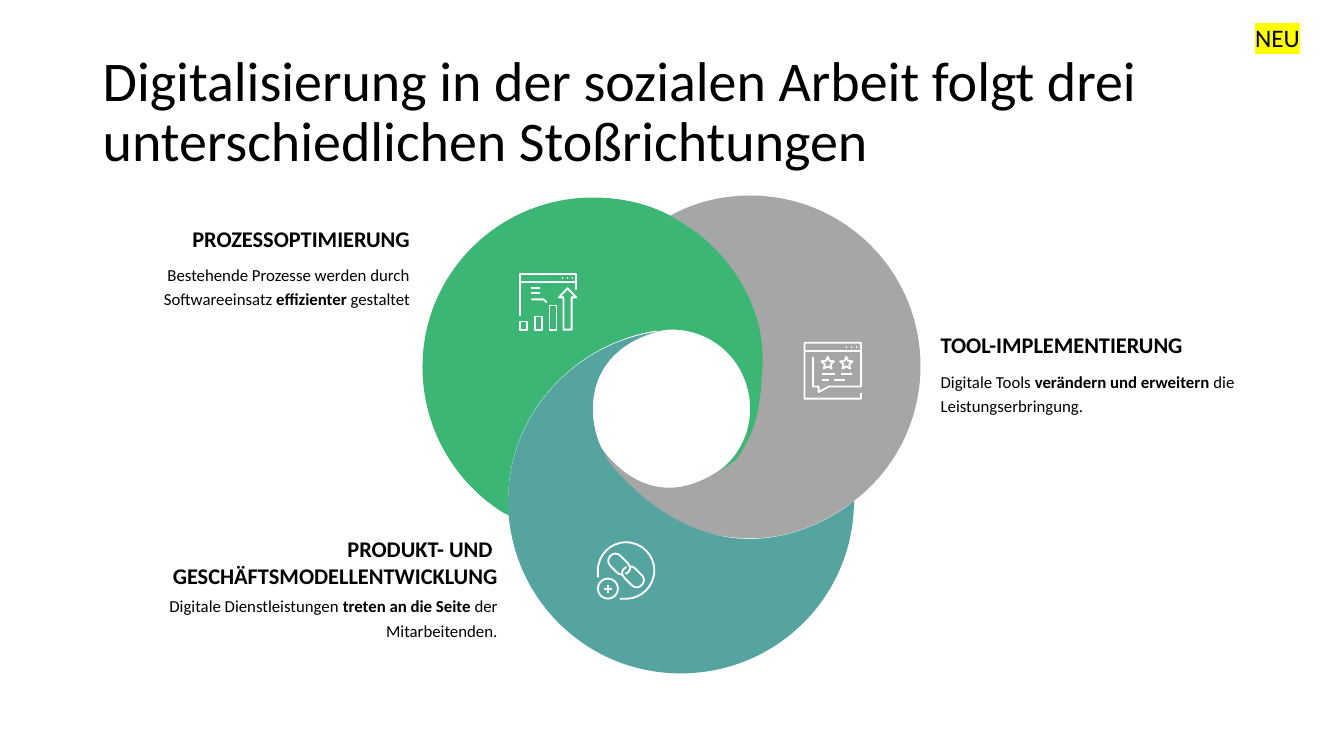
from dataclasses import dataclass
from math import cos, radians, sin

from pptx import Presentation
from pptx.dml.color import RGBColor
from pptx.enum.text import MSO_ANCHOR, PP_ALIGN
from pptx.oxml import parse_xml
from pptx.oxml.ns import nsdecls, qn
from pptx.util import Emu, Pt

COLS, ROWS, CELL = 1333, 750, 9144


@dataclass(frozen=True)
class Theme:
    """Colours and type sizes of the slide."""
    font: str = "Calibri"
    ink: str = "000000"
    white: str = "FFFFFF"
    mark: str = "FFFF00"
    gray: str = "A6A6A6"
    green: str = "3CB675"
    teal: str = "55A49F"
    title: int = 40
    tag: int = 18
    head: int = 16
    body: int = 12
    pen: float = 1.3


THEME = Theme()

GRAY = [
    (744, 194), (715, 194, 688, 201, 665, 214),
    (675, 219, 685, 226, 694, 234), (732, 265, 759, 314, 755, 366),
    (753, 395, 754, 420, 730, 454), (644, 529, 593, 439, 593, 439),
    (602, 487, 663, 515, 663, 515), (686, 527, 716, 534, 745, 534),
    (778, 534, 808, 523, 834, 506), (882, 476, 913, 423, 913, 363),
    (913, 270, 838, 194, 744, 194)]
GREEN = [
    (651, 329), (656, 328, 661, 327, 666, 327),
    (710, 327, 744, 362, 744, 406), (744, 432, 731, 455, 711, 469),
    (717, 465, 724, 461, 731, 455), (754, 421, 754, 396, 756, 366),
    (760, 314, 733, 265, 695, 234), (686, 227, 676, 220, 665, 214),
    (642, 202, 616, 196, 588, 196), (495, 196, 419, 271, 419, 364),
    (419, 425, 451, 478, 498, 508), (501, 509.5, 503, 510.5, 505, 511.5),
    (505, 506, 504, 501, 504, 496), (504, 411, 569, 341, 651, 328)]
TEAL = [
    (613, 469), (613, 469, 588, 445, 588, 406),
    (588, 367, 612, 340, 652, 329), (569, 341, 504, 412, 504, 497),
    (504, 591, 580, 668, 675, 668), (771, 668, 847, 591, 847, 497),
    (847, 497, 732, 598, 613, 469)]
LINK = [
    (620.5, 569.5), (625, 567.5, 627, 563, 622.5, 558.5), (615.5, 551.5),
    (612.5, 548.5, 608.5, 548.5, 605.5, 551.5),
    (602.5, 554.5, 602.5, 558.5, 605.5, 561.5), (612.5, 568.5),
    (613.5, 569.5, 615, 570, 617, 570)]


def put(item, **vals):
    """Set each named value on an item."""
    for name, val in vals.items():
        setattr(item, name, val)


def cells(*nums):
    """Turn grid cells into lengths."""
    return [Emu(round(num * CELL)) for num in nums]


def pairs(step):
    """Split a step into its points."""
    return [step[n:n + 2] for n in range(0, len(step), 2)]


def bend(shape, paths):
    """Join each three legs of a curved step into one cubic curve."""
    legs = iter(list(shape._element.iter(qn("a:lnTo"))))
    for _, *steps in paths:
        for step in steps:
            first, *rest = [next(legs) for _ in pairs(step)]
            if rest:
                first.tag = qn("a:cubicBezTo")
            for leg in rest:
                first.append(leg[0])
                leg.getparent().remove(leg)


def draw(slide, paths, fill=None):
    """Draw paths as one shape, filled or as white strokes."""
    form = None
    for start, *steps in paths:
        if form:
            form.move_to(*cells(*start))
        else:
            form = slide.shapes.build_freeform(*cells(*start), scale=1.0)
        spots = [cells(*spot) for step in steps for spot in pairs(step)]
        form.add_line_segments(spots, close=bool(fill))
    shape = form.convert_to_shape()
    bend(shape, paths)
    shape.shadow.inherit = False
    if fill:
        shape.fill.solid()
        shape.fill.fore_color.rgb = RGBColor.from_string(fill)
        shape.line.fill.background()
    else:
        shape.fill.background()
        shape.line.color.rgb = RGBColor.from_string(THEME.white)
        shape.line.width = Pt(THEME.pen)


def write(slide, box, runs, size, bold=0, mark=None, frame=None, para=None):
    """Add a text box whose runs switch between plain and bold."""
    text = slide.shapes.add_textbox(*cells(*box)).text_frame
    put(text, word_wrap=True, **(frame or {}))
    line = text.paragraphs[0]
    put(line, **(para or {}))
    for n, words in enumerate(runs, bold):
        for row, part in enumerate(words.split("\n")):
            if row:
                line.add_line_break()
            run = line.add_run()
            run.text = part
            put(run.font, size=Pt(size), name=THEME.font, bold=n % 2 == 1)
            run.font.color.rgb = RGBColor.from_string(THEME.ink)
            if mark:
                tint = parse_xml(f'<a:highlight {nsdecls("a")}>'
                                 f'<a:srgbClr val="{mark}"/></a:highlight>')
                run._r.rPr.find(qn("a:solidFill")).addnext(tint)


def label(slide, left, top, width, gap, head, runs, side):
    """Add a bold heading and the text below it."""
    flush = dict.fromkeys(
        ("margin_left", "margin_right", "margin_top", "margin_bottom"), 0)
    write(slide, (left, top, width, 37), [head], THEME.head, bold=1,
          frame=flush, para={"alignment": side})
    write(slide, (left, top + gap, width, 103), runs, THEME.body, frame=flush,
          para={"alignment": side, "line_spacing": Pt(17.5)})


def window(left, top):
    """Give the bar and the dots of a browser window."""
    dots = [left + 41.5 + 4.8 * n for n in range(3)]
    return [[(left, top + 8), (left + 56, top + 8)],
            *[[(x, top + 4), (x + 1, top + 4)] for x in dots]]


def ring(x, y, size):
    """Give the four curves of a circle, clockwise from the left."""
    k = 0.55 * size
    return [(x - size, y),
            (x - size, y - k, x - k, y - size, x, y - size),
            (x + k, y - size, x + size, y - k, x + size, y),
            (x + size, y + k, x + k, y + size, x, y + size),
            (x - k, y + size, x - size, y + k, x - size, y)]


def star(x, y):
    """Give the outline of a five-point star."""
    return [(x + (3, 6.5)[n % 2 == 0] * sin(radians(36 * n)),
             y - (3, 6.5)[n % 2 == 0] * cos(radians(36 * n)))
            for n in range(11)]


def chart():
    """Give the icon with bars and a rising arrow."""
    bars = [[(x, 327), (x, top), (x + 7, top), (x + 7, 327), (x, 327)]
            for x, top in ((516, 319), (530.5, 314), (545, 303))]
    arrow = [(559, 327), (559, 295), (554.5, 295), (563, 286),
             (571.5, 295), (567, 295), (567, 327), (559, 327)]
    return [[(516, 314), (516, 272), (571.5, 272), (571.5, 288)],
            *window(516, 272), *bars, arrow,
            *[[(527, y), (536, y)] for y in (286, 291)],
            [(527, 297), (539, 297), (542.5, 300)]]


def review():
    """Give the icon with stars in a speech bubble."""
    frame = [(854, 390), (854, 395.5), (798, 395.5), (798, 340), (854, 340),
             (854, 383.5), (822, 383.5), (812, 389), (812, 383.5),
             (806.5, 383.5), (806.5, 354)]
    rows = ((815, 828, 371), (834, 845, 371), (815, 822, 377), (827, 838, 377))
    return [frame, *window(798, 340), star(821, 360.5), star(839.5, 360.5),
            *[[(x, y), (end, y)] for x, end, y in rows]]


def chain():
    """Give the icon with chain links in a ring."""
    x, y = 621, 566
    twin = [tuple(2 * (x, y)[n % 2] - num for n, num in enumerate(step))
            for step in LINK]
    return [[(593, 573), *ring(x, y, 28)[:4], (615, 594)], LINK, twin,
            ring(603, 584, 10),
            [(599, 584), (607, 584)], [(603, 580), (603, 588)]]


def main():
    """Build the slide and save it."""
    deck = Presentation()
    wide, high = cells(COLS, ROWS)
    put(deck, slide_width=wide, slide_height=high)
    slide = deck.slides.add_slide(deck.slide_layouts[6])
    write(slide, (92, 40, 1150, 145),
          ["Digitalisierung in der sozialen Arbeit folgt drei "
           "unterschiedlichen Stoßrichtungen"], THEME.title,
          frame={"vertical_anchor": MSO_ANCHOR.MIDDLE},
          para={"line_spacing": 0.9})
    for petal, fill in ((GRAY, THEME.gray), (GREEN, THEME.green),
                        (TEAL, THEME.teal)):
        draw(slide, [petal], fill)
    for icon in (chart, review, chain):
        draw(slide, icon())
    label(slide, 933, 328.5, 320, 35.5, "TOOL-IMPLEMENTIERUNG",
          ["Digitale Tools ", "verändern und erweitern ",
           "die Leistungserbringung."], PP_ALIGN.LEFT)
    label(slide, 102, 531, 391.5, 56,
          "PRODUKT- UND \nGESCHÄFTSMODELLENTWICKLUNG",
          ["Digitale Dienstleistungen ", "treten an die Seite ",
           "der Mitarbeitenden."], PP_ALIGN.RIGHT)
    label(slide, 118, 223, 288.5, 35, "PROZESSOPTIMIERUNG",
          ["Bestehende Prozesse werden durch Softwareeinsatz ",
           "effizienter", " gestaltet"], PP_ALIGN.RIGHT)
    write(slide, (1235, 17, 98, 40), ["NEU"], THEME.tag, mark=THEME.mark)
    deck.save("out.pptx")


if __name__ == "__main__":
    main()
